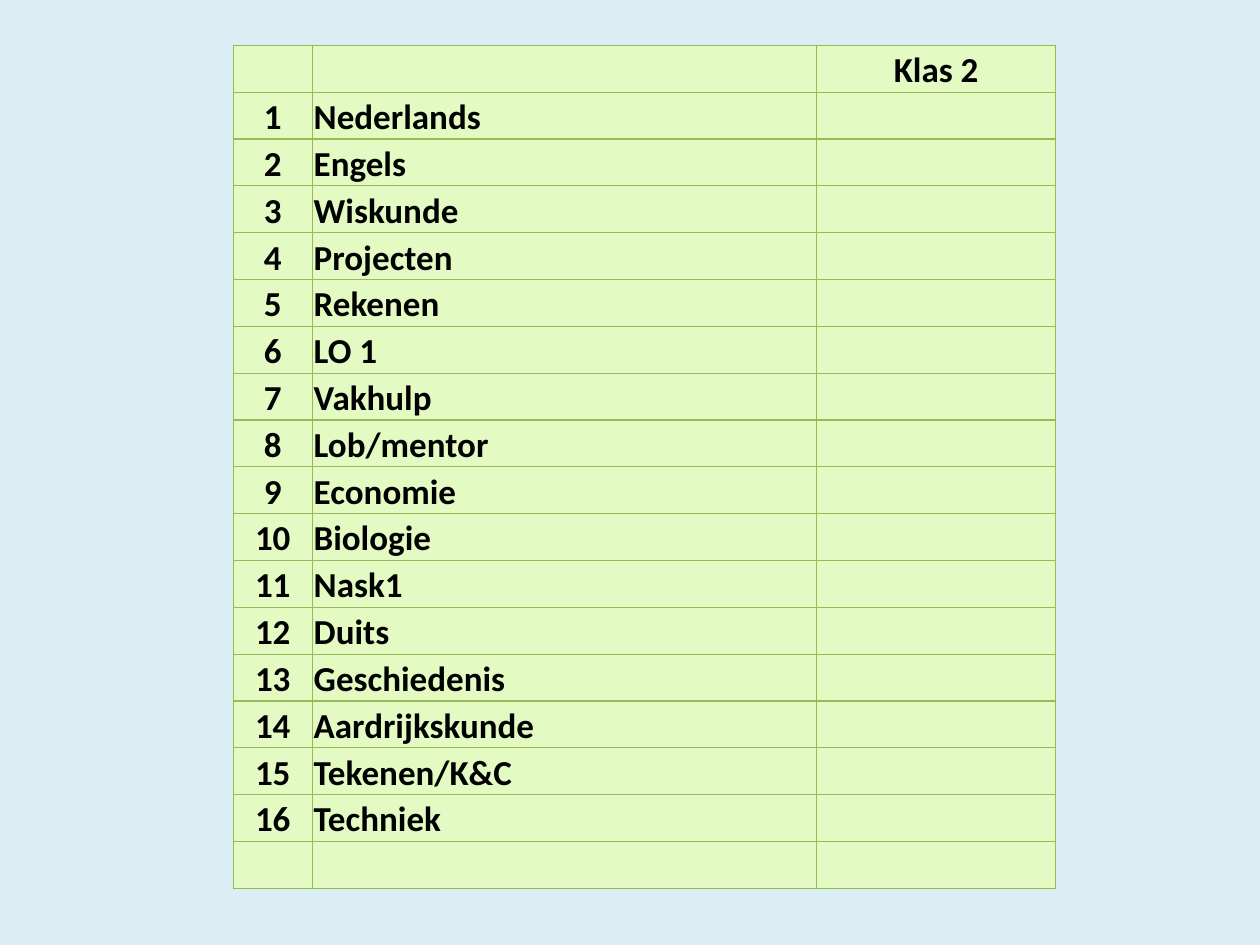
from dataclasses import dataclass

from lxml import etree
from pptx import Presentation
from pptx.dml.color import RGBColor
from pptx.enum.text import MSO_ANCHOR, PP_ALIGN
from pptx.oxml.ns import qn
from pptx.util import Inches, Pt

LEFT, CENTER = PP_ALIGN.LEFT, PP_ALIGN.CENTER
BOTTOM = MSO_ANCHOR.BOTTOM
BLANK_LAYOUT = 6


@dataclass(frozen=True)
class Theme:
    background: str = "DBEEF4"
    cell: str = "E3FBC2"
    border: str = "98B955"
    text: str = "000000"
    font: str = "Calibri"
    size: int = 20
    border_width: float = 0.75


THEME = Theme()
SUBJECTS = [
    "Nederlands", "Engels", "Wiskunde", "Projecten", "Rekenen", "LO 1",
    "Vakhulp", "Lob/mentor", "Economie", "Biologie", "Nask1", "Duits",
    "Geschiedenis", "Aardrijkskunde", "Tekenen/K&C", "Techniek",
]
COLUMN_WIDTHS = [0.63, 4, 1.9]
COLUMN_ALIGNMENTS = [CENTER, LEFT, CENTER]


def set_background(slide):
    fill = slide.background.fill
    fill.solid()
    fill.fore_color.rgb = RGBColor.from_string(THEME.background)


def add_borders(cell):
    tc_pr = cell._tc.get_or_add_tcPr()
    for side in ("a:lnL", "a:lnR", "a:lnT", "a:lnB"):
        ln = etree.SubElement(tc_pr, qn(side), w=str(Pt(THEME.border_width)))
        fill = etree.SubElement(ln, qn("a:solidFill"))
        etree.SubElement(fill, qn("a:srgbClr"), val=THEME.border)


def format_cell(cell, text, alignment):
    cell.margin_left = cell.margin_right = cell.margin_top = Inches(0.01)
    cell.margin_bottom = 0
    cell.vertical_anchor = BOTTOM
    add_borders(cell)
    cell.fill.solid()
    cell.fill.fore_color.rgb = RGBColor.from_string(THEME.cell)
    cell.text_frame.text = text
    p = cell.text_frame.paragraphs[0]
    p.alignment = alignment
    for r in p.runs:
        r.font.name = THEME.font
        r.font.size = Pt(THEME.size)
        r.font.bold = True
        r.font.color.rgb = RGBColor.from_string(THEME.text)


def add_subject_table(slide):
    numbered = [(str(n), name, "") for n, name in enumerate(SUBJECTS, 1)]
    rows = [("", "", "Klas 2"), *numbered, ("", "", "")]
    table = slide.shapes.add_table(
        len(rows), len(COLUMN_WIDTHS), Inches(1.85), Inches(0.36),
        Inches(sum(COLUMN_WIDTHS)), Inches(6.69)).table
    for column, width in zip(table.columns, COLUMN_WIDTHS):
        column.width = Inches(width)
    for i, row in enumerate(rows):
        for j, (text, alignment) in enumerate(zip(row, COLUMN_ALIGNMENTS)):
            format_cell(table.cell(i, j), text, alignment)


def main():
    prs = Presentation()
    prs.slide_width, prs.slide_height = Inches(10), Inches(7.5)
    slide = prs.slides.add_slide(prs.slide_layouts[BLANK_LAYOUT])
    set_background(slide)
    add_subject_table(slide)
    prs.save("out.pptx")


if __name__ == "__main__":
    main()
